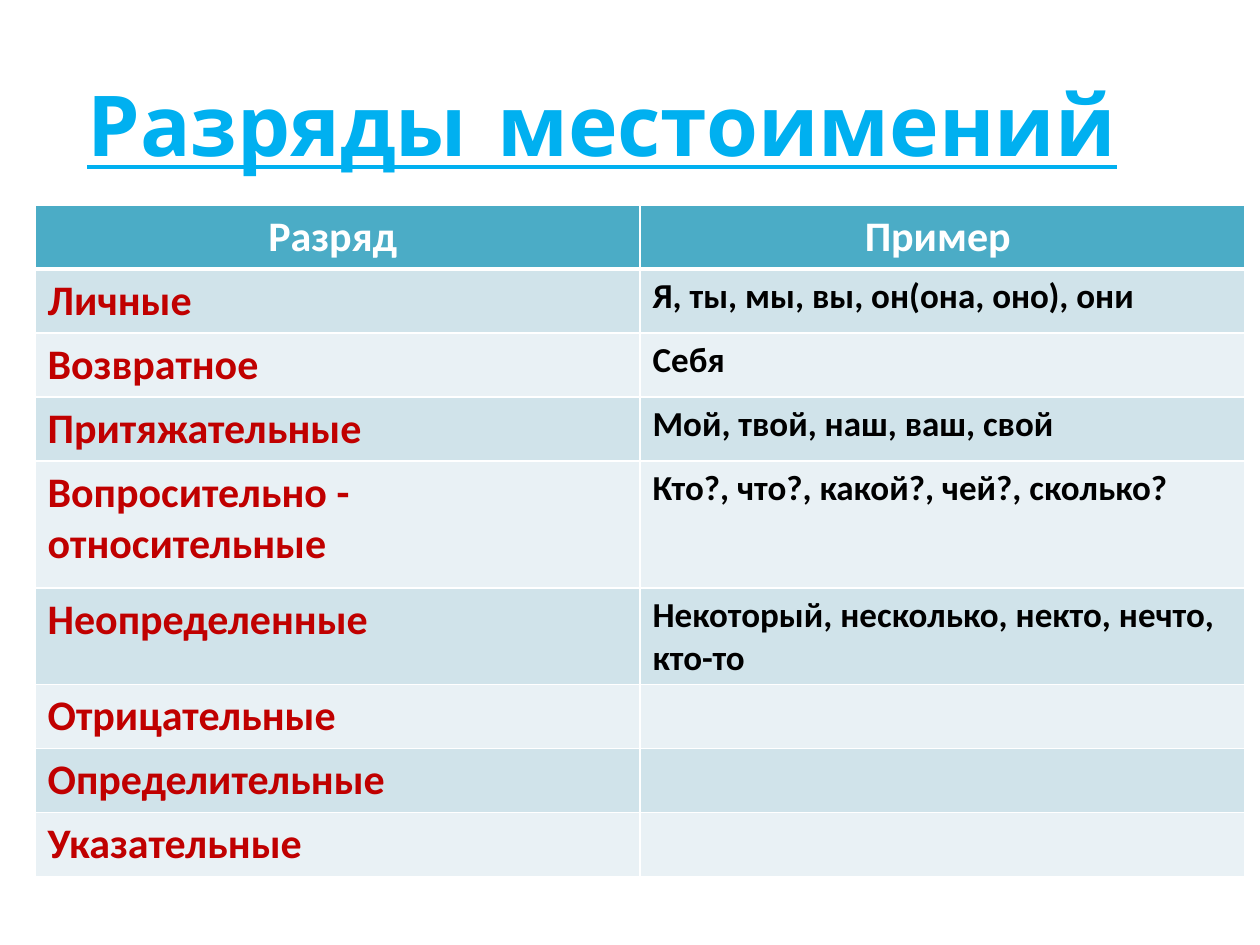
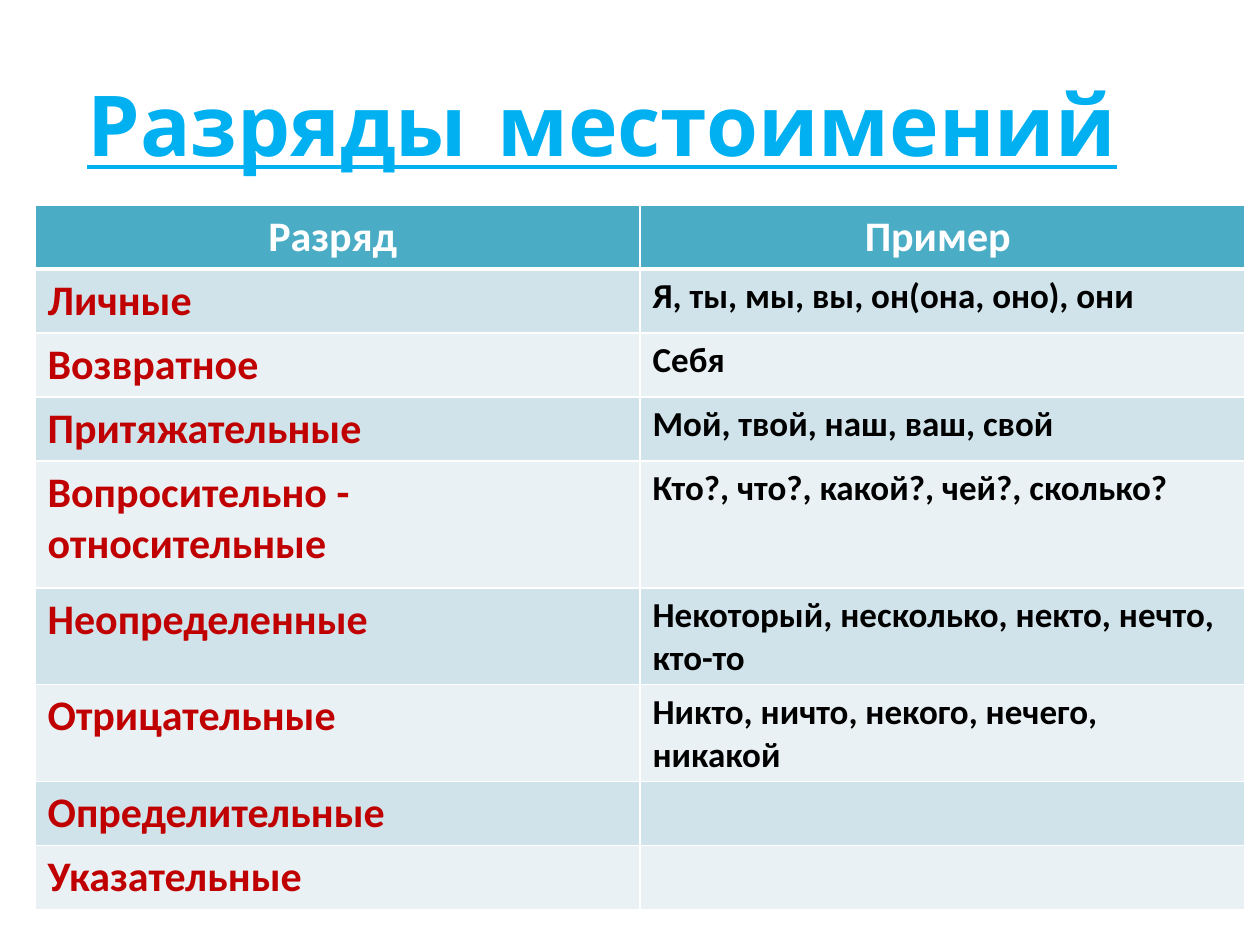
from lxml import etree
from pptx import Presentation
from pptx.dml.color import RGBColor
from pptx.enum.text import PP_ALIGN
from pptx.oxml.ns import qn
from pptx.util import Emu, Pt

CENTER, LEFT = PP_ALIGN.CENTER, PP_ALIGN.LEFT

# Shared look
SCALE = 914400 / 126
WHITE, BLACK, RED = "FFFFFF", "000000", "C00000"
BLUE, TEAL = "00B0F0", "4BACC6"
BANDS = ["D0E3EA", "E9F1F5"]
COLS = 605
ROW, TALL = 64, 127

# Wording
TITLE = "Разряды местоимений"
HEAD = ["Разряд ", "Пример "]
KINDS = ["Личные", "Возвратное", "Притяжательные",
         "Вопросительно - относительные", "Неопределенные",
         "Отрицательные", "Определительные", "Указательные"]
WORDS = ["Я, ты, мы, вы, он(она, оно), они", "Себя",
         "Мой, твой, наш, ваш, свой",
         "Кто?, что?, какой?, чей?, сколько?",
         "Некоторый, несколько, некто, нечто, кто-то",
         "Никто, ничто, некого, нечего, никакой"]
TALL_ROW = 4
SHOWN = [5, 6]  # examples filled in on each slide


def px(n):
    return Emu(round(n * SCALE))


def paint(fill, color):
    fill.solid()
    fill.fore_color.rgb = RGBColor.from_string(color)


def add_run(para, text, size, color, font="Calibri", under=False):
    run = para.add_run()
    run.text = text
    face = run.font
    face.name, face.size, face.bold = font, Pt(size), True
    face.underline = under
    face.color.rgb = RGBColor.from_string(color)


def add_title(slide):
    box = slide.shapes.add_textbox(px(35), px(66), px(1134), px(595))
    paint(box.fill, WHITE)
    shade = box.fill._xPr.find(qn("a:solidFill"))[0]
    etree.SubElement(shade, qn("a:alpha"), val="65000")
    frame = box.text_frame
    frame.word_wrap = True
    para = frame.paragraphs[0]
    para.alignment = CENTER
    add_run(para, TITLE, 48, BLUE, "Comic Neue", True)


def set_edges(cell, top, low):
    props = cell._tc.get_or_add_tcPr()
    for side, width in zip("LRTB", [1, 1, top, low]):
        line = etree.SubElement(props, qn("a:ln" + side), w=str(Pt(width)))
        fill = etree.SubElement(line, qn("a:solidFill"))
        etree.SubElement(fill, qn("a:srgbClr"), val=WHITE)


def fill_cell(cell, text, size, color, back, align, top=1, low=1):
    set_edges(cell, top, low)
    paint(cell.fill, back)
    if text:
        para = cell.text_frame.paragraphs[0]
        para.alignment = align
        add_run(para, text, size, color)


def add_grid(slide, shown):
    count = len(KINDS) + 1
    high = ROW * (count - 1) + TALL
    grid = slide.shapes.add_table(count, 2, px(35), px(205),
                                  px(2 * COLS), px(high)).table
    grid.horz_banding = False
    for col in grid.columns:
        col.width = px(COLS)
    for i, row in enumerate(grid.rows):
        row.height = px(TALL if i == TALL_ROW else ROW)

    # Header
    for j, text in enumerate(HEAD):
        fill_cell(grid.cell(0, j), text, 24, WHITE, TEAL, CENTER, low=3)

    # Kinds with their examples
    for i, kind in enumerate(KINDS):
        back = BANDS[i % 2]
        top = 1 if i else 3
        words = WORDS[i] if i < shown else ""
        fill_cell(grid.cell(i + 1, 0), kind, 24, RED, back, LEFT, top)
        fill_cell(grid.cell(i + 1, 1), words, 20, BLACK, back, LEFT, top)


def main():
    deck = Presentation()
    deck.slide_width, deck.slide_height = px(1260), px(945)
    for shown in SHOWN:
        slide = deck.slides.add_slide(deck.slide_layouts[6])
        paint(slide.background.fill, WHITE)
        add_title(slide)
        add_grid(slide, shown)
    deck.save("out.pptx")


if __name__ == "__main__":
    main()
